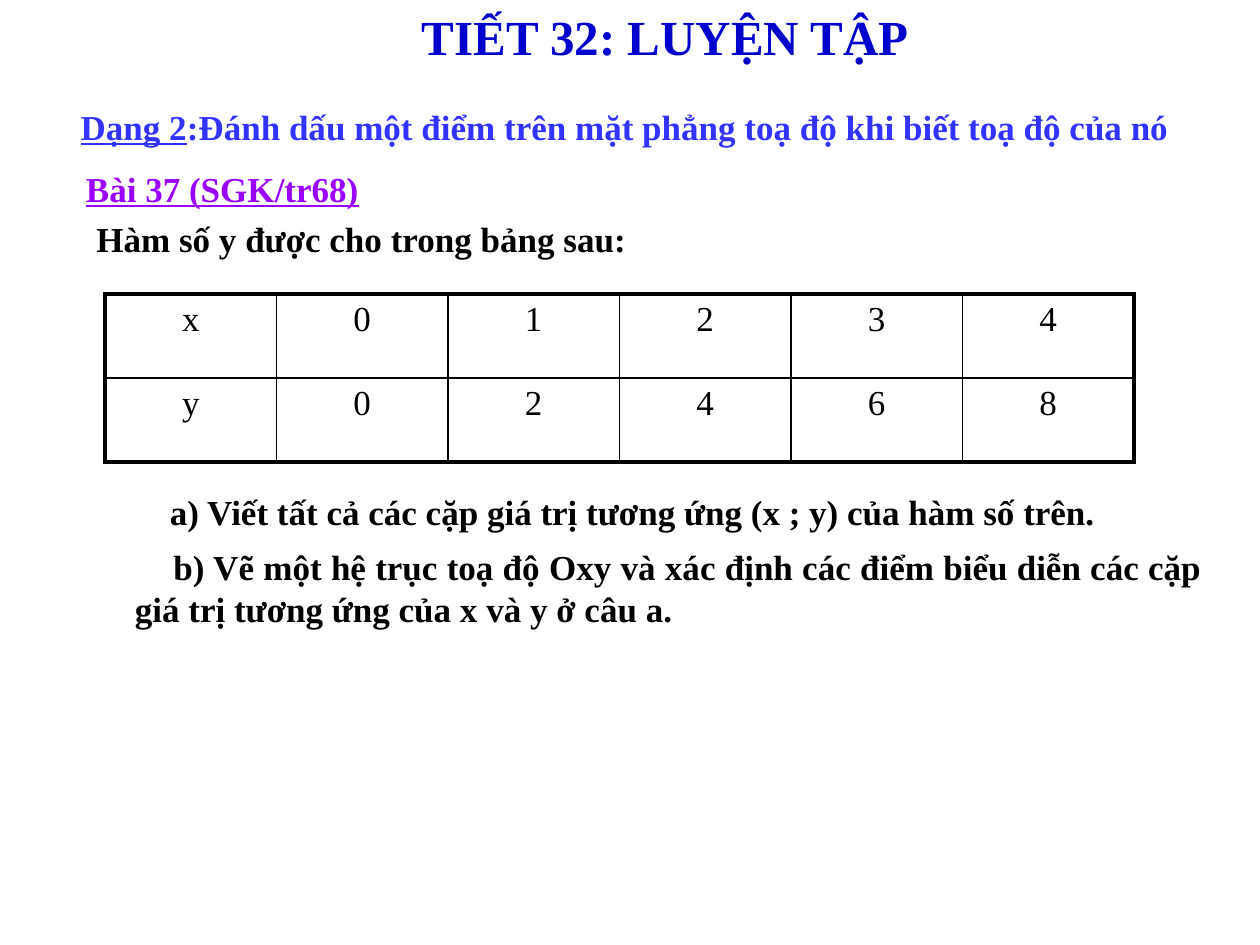
from dataclasses import dataclass

from lxml import etree
from pptx import Presentation
from pptx.dml.color import RGBColor
from pptx.enum.text import MSO_AUTO_SIZE, PP_ALIGN
from pptx.oxml.ns import qn
from pptx.util import Pt

LEFT, CENTER, JUST = PP_ALIGN.LEFT, PP_ALIGN.CENTER, PP_ALIGN.JUSTIFY
FIT = MSO_AUTO_SIZE.SHAPE_TO_FIT_TEXT


@dataclass(frozen=True)
class Theme:
    font: str = "Times New Roman"
    title: str = "0000CC"
    topic: str = "3333FF"
    task: str = "9900FF"
    ink: str = "000000"
    big: int = 28
    body: int = 20
    thick: float = 2.25
    thin: float = 1


THEME = Theme()


def add_run(para, text, color, size=THEME.body, bold=True, line=False):
    run = para.add_run()
    run.text = text
    font = run.font
    font.name, font.size = THEME.font, Pt(size)
    font.bold, font.underline = bold, line
    font.color.rgb = RGBColor.from_string(color)


def add_text(slide, box, align=LEFT, indent=0):
    """Add an empty text box and return its paragraph."""
    shape = slide.shapes.add_textbox(*map(Pt, box))
    frame = shape.text_frame
    frame.word_wrap, frame.auto_size = True, FIT
    para = frame.paragraphs[0]
    para.alignment = align
    if indent:
        para._p.get_or_add_pPr().set("indent", str(Pt(indent)))
    return para


def add_edge(cell, side, width):
    props = cell._tc.get_or_add_tcPr()
    edge = etree.SubElement(props, qn(f"a:ln{side}"), w=str(Pt(width)))
    fill = etree.SubElement(edge, qn("a:solidFill"))
    etree.SubElement(fill, qn("a:srgbClr"), val=THEME.ink)


def add_head(slide, box):
    """Lesson title, topic, task name and lead-in."""
    x, y, w, _ = box
    title = add_text(slide, (x + 200, y, 306, 41))
    add_run(title, "TIẾT 32: LUYỆN TẬP", THEME.title, THEME.big)
    topic = add_text(slide, (x + 5, y + 56.5, w, 31))
    add_run(topic, "Dạng 2", THEME.topic, line=True)
    add_run(topic, ":Đánh dấu một điểm trên mặt phẳng toạ độ khi biết toạ độ của nó",
            THEME.topic)
    task = add_text(slide, (x + 8, y + 92, 192, 31))
    add_run(task, "Bài 37 (SGK/tr68)", THEME.task, line=True)
    lead = add_text(slide, (x + 14, y + 121, 492, 31))
    add_run(lead, "Hàm số y được cho trong bảng sau:", THEME.ink)


def add_grid(slide, box, rows):
    """Value table with a thick frame and thin inner lines."""
    table = slide.shapes.add_table(len(rows), len(rows[0]), *map(Pt, box)).table
    table.first_row = table.horz_banding = False
    last_r, last_c = len(rows) - 1, len(rows[0]) - 1
    for r, row in enumerate(rows):
        for c, value in enumerate(row):
            cell = table.cell(r, c)
            outer = {"L": c == 0, "R": c == last_c, "T": r == 0, "B": r == last_r}
            for side, rim in outer.items():
                add_edge(cell, side, THEME.thick if rim else THEME.thin)
            cell.fill.background()
            para = cell.text_frame.paragraphs[0]
            para.alignment = CENTER
            add_run(para, value, THEME.ink, bold=False)


def add_asks(slide, box):
    """Questions a and b."""
    x, y, w, _ = box
    first = add_text(slide, (x, y, w, 31), JUST, 20)
    add_run(first, "a) Viết tất cả các cặp giá trị tương ứng (x ; y) của hàm số trên.",
            THEME.ink)
    second = add_text(slide, (x, y + 31, w, 55), JUST, 22)
    add_run(second, "b) Vẽ một hệ trục toạ độ Oxy và xác định các điểm biểu diễn "
            "các cặp giá trị tương ứng của x và y ở câu a.", THEME.ink)


def main():
    deck = Presentation()
    deck.slide_width, deck.slide_height = Pt(720), Pt(540)
    slide = deck.slides.add_slide(deck.slide_layouts[6])
    add_head(slide, (34, 0, 670, 152))
    add_grid(slide, (60, 168, 588, 96), ["x01234", "y02468"])
    add_asks(slide, (70, 277, 624, 86))
    deck.save("out.pptx")


if __name__ == "__main__":
    main()
